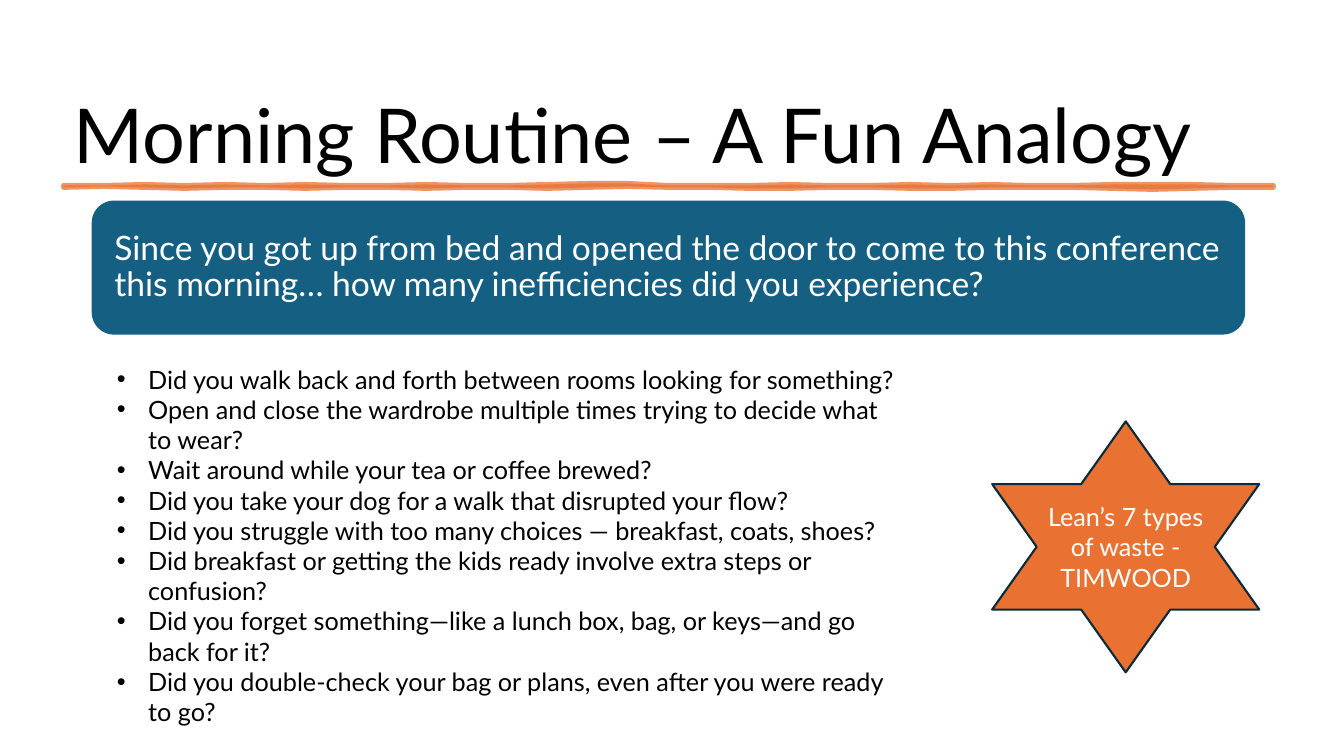
from dataclasses import dataclass

from lxml import etree
from pptx import Presentation
from pptx import util as u
from pptx.dml.color import RGBColor
from pptx.enum import shapes, text
from pptx.oxml.ns import qn


@dataclass(frozen=True)
class Theme:
    font: str = "Lato"
    ink: str = "000000"
    light: str = "FFFFFF"
    blue: str = "156082"
    orange: str = "E97132"
    outline: str = "092A39"
    title_size: int = 54
    lead_size: int = 24
    body_size: int = 18


THEME = Theme()


def write(frame, *lines, size, color, align=text.PP_ALIGN.LEFT,
          anchor=text.MSO_ANCHOR.TOP, spacing=1.0, after=0, indent=None):
    """Fill a text frame with one paragraph per line, bulleted if indented."""
    frame.word_wrap = True
    frame.auto_size = text.MSO_AUTO_SIZE.NONE
    frame.vertical_anchor = anchor
    for number, line in enumerate(lines):
        paragraph = frame.paragraphs[0] if number == 0 else frame.add_paragraph()
        paragraph.alignment = align
        paragraph.line_spacing = spacing
        paragraph.space_before = u.Pt(0)
        paragraph.space_after = u.Pt(after)
        run = paragraph.add_run()
        run.text = line
        run.font.name = THEME.font
        run.font.size = u.Pt(size)
        run.font.color.rgb = RGBColor.from_string(color)
        if indent:
            properties = paragraph._p.get_or_add_pPr()
            properties.set("marL", str(u.Inches(indent)))
            properties.set("indent", str(-u.Inches(indent)))
            etree.SubElement(properties, qn("a:buFont"), typeface="Arial")
            etree.SubElement(properties, qn("a:buChar"), char="•")


def make_translucent(fill_parent, percent):
    for color in fill_parent.iter(qn("a:srgbClr")):
        etree.SubElement(color, qn("a:alpha"), val=str(percent * 1000))


class SlideBuilder:
    def __init__(self, deck, theme):
        self.theme = theme
        self.slide = deck.slides.add_slide(deck.slide_layouts[1])

    def place(self, index, box):
        holder = self.slide.placeholders[index]
        holder.left, holder.top, holder.width, holder.height = map(u.Inches, box)
        return holder.text_frame

    def title(self, words, box):
        write(self.place(0, box), words, size=self.theme.title_size,
              color=self.theme.ink, anchor=text.MSO_ANCHOR.BOTTOM, spacing=0.9)

    def bullets(self, lines, box):
        write(self.place(1, box), *lines, size=self.theme.body_size,
              color=self.theme.ink, indent=0.31)

    def paint(self, shape, fill, line=None, width=0):
        shape.shadow.inherit = False
        shape.fill.solid()
        shape.fill.fore_color.rgb = RGBColor.from_string(fill)
        if line:
            shape.line.color.rgb = RGBColor.from_string(line)
            shape.line.width = u.Pt(width)
        else:
            shape.line.fill.background()

    def label(self, preset, words, box, fill, line=None, width=0, margin=0.1,
              **text_format):
        shape = self.slide.shapes.add_shape(preset, *map(u.Inches, box))
        self.paint(shape, fill, line, width)
        shape.text_frame.margin_left = shape.text_frame.margin_right = u.Inches(margin)
        write(shape.text_frame, words, color=self.theme.light,
              anchor=text.MSO_ANCHOR.MIDDLE, **text_format)

    def brush_stroke(self, left, width, upper, lower):
        """Draw a hand-made rule from evenly spaced upper and lower heights."""
        step = width / (len(upper) - 1)
        edge = [(left + i * step, y) for i, y in enumerate(upper)]
        edge += [(left + i * step, y) for i, y in reversed(list(enumerate(lower)))]
        points = [(u.Inches(x), u.Inches(y)) for x, y in edge]
        builder = self.slide.shapes.build_freeform(*points[0])
        builder.add_line_segments(points[1:], close=True)
        stroke = builder.convert_to_shape()
        self.paint(stroke, self.theme.orange, self.theme.orange, 3.5)
        make_translucent(stroke._element.spPr, 75)


def main():
    deck = Presentation()
    deck.slide_width, deck.slide_height = u.Inches(13.33), u.Inches(7.5)
    page = SlideBuilder(deck, THEME)

    # Title and its underline
    page.title("Morning Routine – A Fun Analogy", (0.63, 0.26, 12.05, 1.57))
    page.brush_stroke(
        0.63, 12,
        upper=[1.84, 1.84, 1.83, 1.84, 1.83, 1.84, 1.83, 1.84, 1.84, 1.83, 1.84,
               1.84, 1.83, 1.82, 1.82, 1.84, 1.84, 1.84, 1.83, 1.84, 1.84,
               1.83, 1.84, 1.83, 1.84, 1.84, 1.83, 1.83, 1.83, 1.84, 1.84],
        lower=[1.86, 1.85, 1.86, 1.87, 1.86, 1.86, 1.87, 1.86, 1.86, 1.87, 1.86,
               1.86, 1.87, 1.86, 1.85, 1.86, 1.86, 1.87, 1.87, 1.86, 1.86,
               1.87, 1.87, 1.86, 1.86, 1.86, 1.87, 1.88, 1.87, 1.86, 1.86])

    # Opening question
    page.label(
        shapes.MSO_SHAPE.ROUNDED_RECTANGLE,
        "Since you got up from bed and opened the door to come to this conference "
        "this morning… how many inefficiencies did you experience?",
        (0.91, 1.99, 11.44, 1.33), THEME.blue, margin=0.16,
        size=THEME.lead_size, spacing=0.9, after=8.4)

    # Examples of inefficiency
    page.bullets([
        "Did you walk back and forth between rooms looking for something?",
        "Open and close the wardrobe multiple times trying to decide what to wear?",
        "Wait around while your tea or coffee brewed?",
        "Did you take your dog for a walk that disrupted your flow?",
        "Did you struggle with too many choices — breakfast, coats, shoes?",
        "Did breakfast or getting the kids ready involve extra steps or confusion?",
        "Did you forget something—like a lunch box, bag, or keys—and go back for it?",
        "Did you double-check your bag or plans, even after you were ready to go?",
    ], (1.06, 3.56, 7.95, 3.74))

    # Lean callout
    page.label(
        shapes.MSO_SHAPE.STAR_6_POINT, "Lean’s 7 types of waste - TIMWOOD",
        (9.84, 4.18, 2.65, 2.49), THEME.orange, line=THEME.outline, width=1.5,
        size=THEME.body_size, align=text.PP_ALIGN.CENTER, after=6)

    deck.save("out.pptx")


if __name__ == "__main__":
    main()
